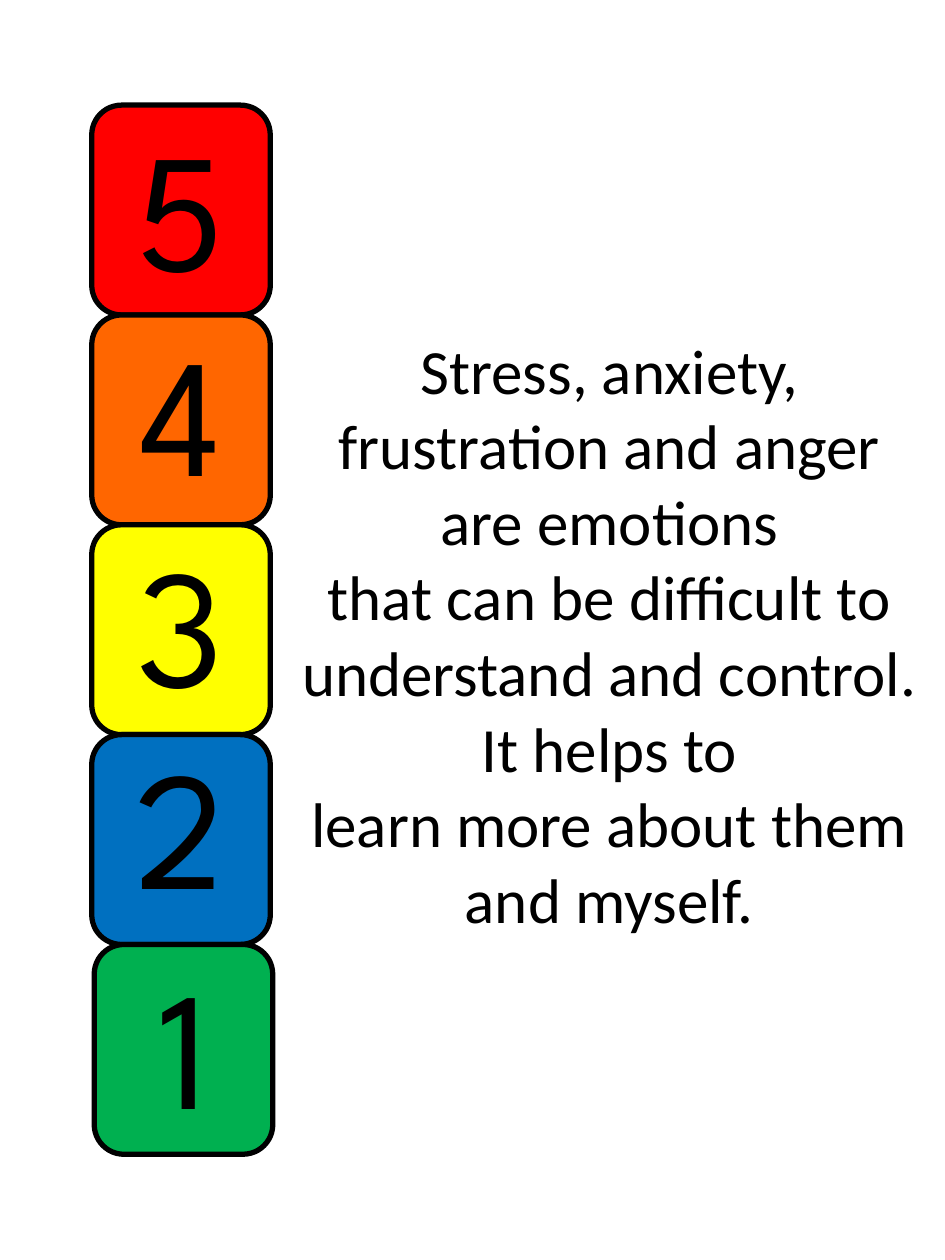
from pptx import Presentation
from pptx.dml.color import RGBColor
from pptx.enum.shapes import MSO_SHAPE
from pptx.enum.text import PP_ALIGN
from pptx.util import Cm, Pt

ROUNDED = MSO_SHAPE.ROUNDED_RECTANGLE
CENTER = PP_ALIGN.CENTER

MESSAGE = [
    "Stress, anxiety, frustration and anger are emotions",
    "that can be difficult to understand and control. It helps to",
    "learn more about them and myself.",
]
LEVELS = [
    ("5", "FF0000", 1.85, 1.96),
    ("4", "FF6600", 1.85, 6.1),
    ("3", "FFFF00", 1.85, 10.34),
    ("2", "0070C0", 1.85, 14.43),
    ("1", "00B050", 1.9, 18.85),
]
SCALE_TOP = 2.12
BLOCK_WIDTH, BLOCK_HEIGHT = 3.6, 4.23
DIGIT_HEIGHT = 4.37


def color(hex_code):
    return RGBColor.from_string(hex_code)


def add_text(slide, lines, left, top, width, height, font, size):
    frame = slide.shapes.add_textbox(Cm(left), Cm(top), Cm(width), Cm(height)).text_frame
    frame.word_wrap = True
    frame.text = "\n".join(lines)
    for paragraph in frame.paragraphs:
        paragraph.alignment = CENTER
        for run in paragraph.runs:
            run.font.name = font
            run.font.size = Pt(size)
            run.font.color.rgb = color("000000")


def add_block(slide, left, top, fill):
    block = slide.shapes.add_shape(
        ROUNDED, Cm(left), Cm(top), Cm(BLOCK_WIDTH), Cm(BLOCK_HEIGHT))
    block.shadow.inherit = False
    block.fill.solid()
    block.fill.fore_color.rgb = color(fill)
    block.line.color.rgb = color("000000")
    block.line.width = Pt(3)


def main():
    deck = Presentation()
    deck.slide_width, deck.slide_height = Cm(19.05), Cm(25.4)
    slide = deck.slides.add_slide(deck.slide_layouts[6])
    add_text(slide, MESSAGE, 5.72, 6.55, 13.13, 12.57, "Calibri", 36)
    for i, (digit, fill, left, digit_top) in enumerate(LEVELS):
        add_block(slide, left, SCALE_TOP + i * BLOCK_HEIGHT, fill)
        add_text(slide, [digit], left, digit_top, BLOCK_WIDTH, DIGIT_HEIGHT,
                 "League Spartan", 96)
    deck.save("out.pptx")


if __name__ == "__main__":
    main()
